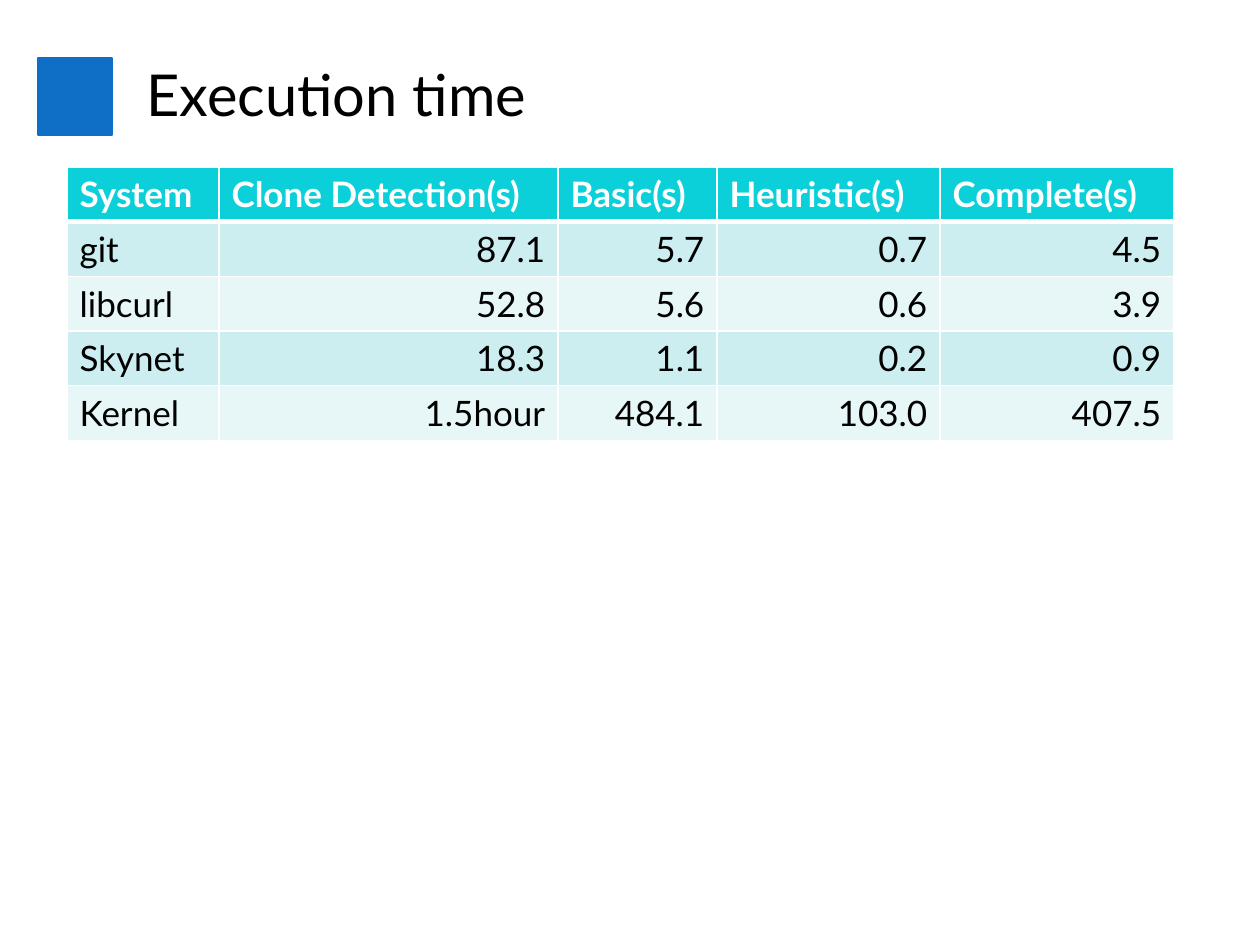
from lxml import etree
from pptx import Presentation
from pptx.dml.color import RGBColor
from pptx.enum.shapes import MSO_SHAPE
from pptx.enum.text import MSO_ANCHOR, PP_ALIGN
from pptx.oxml.ns import qn
from pptx.util import Emu, Pt

TITLE = "Execution time"
ROWS = [
    ("System", "Clone Detection(s)", "Basic(s)", "Heuristic(s)", "Complete(s)"),
    ("git", "87.1", "5.7", "0.7", "4.5"),
    ("libcurl", "52.8", "5.6", "0.6", "3.9"),
    ("Skynet", "18.3", "1.1", "0.2", "0.9"),
    ("Kernel", "1.5hour", "484.1", "103.0", "407.5"),
]
COL_WIDTHS = (152, 339, 159, 223, 234)

FONT = "Lato"
BLUE = RGBColor(0x0F, 0x6F, 0xC6)
CYAN = RGBColor(0x0B, 0xD0, 0xD9)
BAND_DARK = RGBColor(0xCC, 0xEE, 0xF1)
BAND_LIGHT = RGBColor(0xE7, 0xF7, 0xF8)
BLACK = RGBColor(0, 0, 0)
WHITE = RGBColor(255, 255, 255)

RECT = MSO_SHAPE.RECTANGLE
MIDDLE = MSO_ANCHOR.MIDDLE
LEFT, RIGHT = PP_ALIGN.LEFT, PP_ALIGN.RIGHT


def px(n):
    return Emu(round(n * 914400 / 126))


def add_run(p, text, size, color, bold=False):
    r = p.add_run()
    r.text = text
    r.font.name = FONT
    r.font.size = Pt(size)
    r.font.bold = bold
    r.font.color.rgb = color


def set_borders(cell, widths):
    tcPr = cell._tc.get_or_add_tcPr()
    for i, (side, width) in enumerate(widths.items()):
        ln = etree.Element(qn("a:ln" + side), w=str(Pt(width)))
        fill = etree.SubElement(ln, qn("a:solidFill"))
        etree.SubElement(fill, qn("a:srgbClr"), val=str(WHITE))
        tcPr.insert(i, ln)


prs = Presentation()
prs.slide_width, prs.slide_height = px(1260), px(945)
s = prs.slides.add_slide(prs.slide_layouts[6])

square = s.shapes.add_shape(RECT, px(38), px(58), px(74), px(77))
square.shadow.inherit = False
square.fill.solid()
square.fill.fore_color.rgb = BLUE
square.line.color.rgb = BLUE
square.line.width = Pt(1)

title = s.shapes.add_textbox(px(134), px(50), px(1096), px(95))
tf = title.text_frame
tf.word_wrap = True
tf.vertical_anchor = MIDDLE
p = tf.paragraphs[0]
p.line_spacing = 0.9
add_run(p, TITLE, 33, BLACK)

table = s.shapes.add_table(len(ROWS), len(COL_WIDTHS), px(67), px(167),
                           px(sum(COL_WIDTHS)), px(273)).table
for col, width in zip(table.columns, COL_WIDTHS):
    col.width = px(width)

for i, row in enumerate(ROWS):
    header = i == 0
    band = CYAN if header else BAND_DARK if i % 2 else BAND_LIGHT
    top = 3 if i == 1 else 1
    bottom = 3 if header else 1
    for j, text in enumerate(row):
        cell = table.cell(i, j)
        cell.fill.solid()
        cell.fill.fore_color.rgb = band
        set_borders(cell, {"L": 1, "R": 1, "T": top, "B": bottom})
        p = cell.text_frame.paragraphs[0]
        p.alignment = LEFT if header or j == 0 else RIGHT
        add_run(p, text, 20, WHITE if header else BLACK, header)

prs.save("out.pptx")
